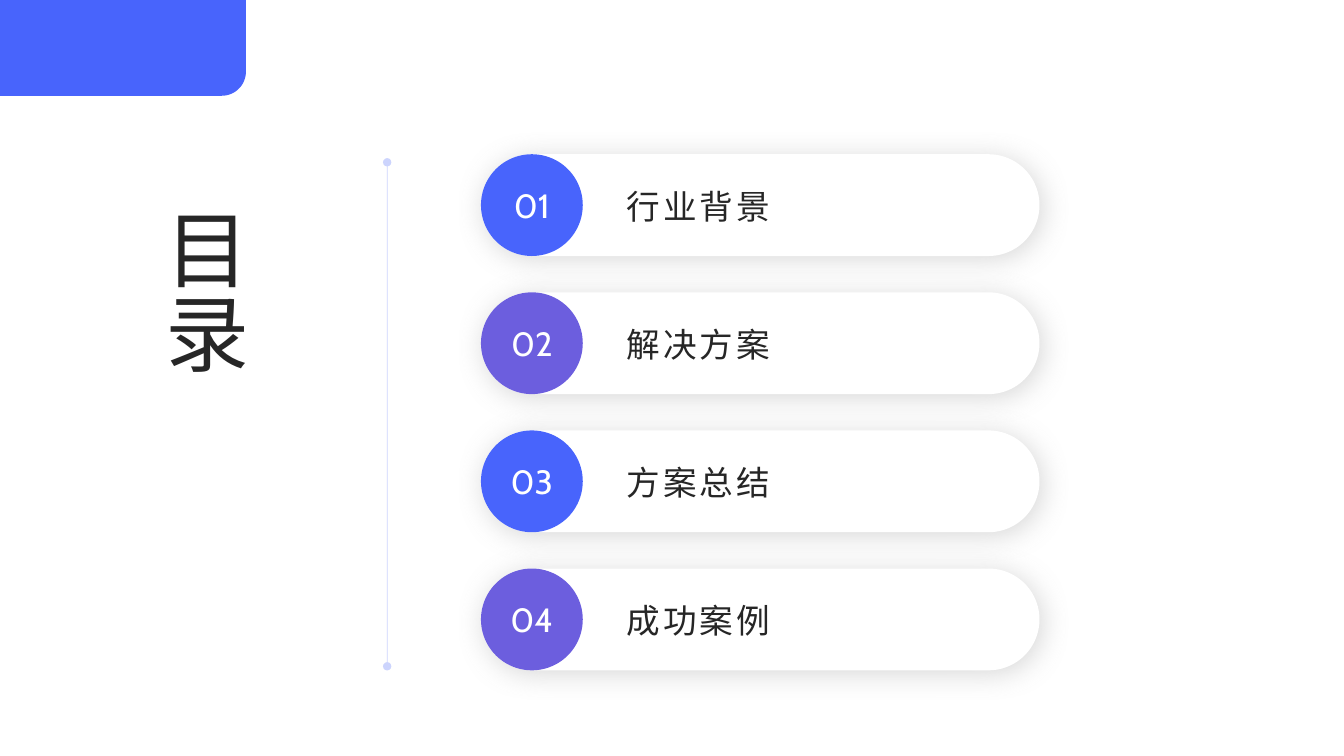
"""Build a contents slide with a vertical title and four numbered pills."""
from dataclasses import dataclass
from math import cos, pi, sin

from lxml.etree import SubElement
from pptx import Presentation
from pptx.dml.color import RGBColor
from pptx.enum.shapes import MSO_CONNECTOR as Connector, MSO_SHAPE as Preset
from pptx.enum.text import MSO_ANCHOR as Anchor, PP_ALIGN as Align
from pptx.oxml.ns import qn
from pptx.util import Pt

EMU_PER_PX = 9144


@dataclass(frozen=True)
class Theme:
    font: str = "Cabin"
    blue: str = "4864FC"
    purple: str = "6C5EDE"
    rule: str = "002AF9"
    ink: str = "262626"
    white: str = "FFFFFF"
    shadow: str = "808080"
    title_size: int = 60
    item_size: int = 24


def px(*lengths):
    return [round(length * EMU_PER_PX) for length in lengths]


class SlideBuilder:
    def __init__(self, presentation, theme):
        self.theme = theme
        self.slide = presentation.slides.add_slide(presentation.slide_layouts[6])
        self.shapes = self.slide.shapes

    def paint(self, shape, color):
        shape.shadow.inherit = False
        shape.fill.solid()
        shape.fill.fore_color.rgb = RGBColor.from_string(color)
        shape.line.fill.background()

    def preset(self, kind, box, color):
        shape = self.shapes.add_shape(kind, *px(*box))
        self.paint(shape, color)
        return shape

    def set_text(self, shape, text, size, color, align, inset=(0, 0), spacing=0):
        frame = shape.text_frame
        across, down = px(*inset)
        frame_format = {
            "word_wrap": True, "vertical_anchor": Anchor.MIDDLE,
            "margin_left": across, "margin_right": across,
            "margin_top": down, "margin_bottom": down,
        }
        for name, value in frame_format.items():
            setattr(frame, name, value)
        paragraph = frame.paragraphs[0]
        paragraph.alignment = align
        run = paragraph.add_run()
        run.text = text
        for name, value in {"name": self.theme.font, "size": Pt(size)}.items():
            setattr(run.font, name, value)
        run.font.color.rgb = RGBColor.from_string(color)
        if spacing:
            shape.element.find(".//" + qn("a:rPr")).set("spc", str(spacing * 100))

    def label(self, box, text, size, align=Align.LEFT, inset=(10, 0), spacing=0,
              vertical=False):
        shape = self.shapes.add_textbox(*px(*box))
        self.set_text(shape, text, size, self.theme.ink, align, inset, spacing)
        if vertical:
            shape.element.find(".//" + qn("a:bodyPr")).set("vert", "eaVert")

    def badge(self, box, text, color):
        shape = self.preset(Preset.OVAL, box, color)
        self.set_text(shape, text, self.theme.item_size, self.theme.white, Align.CENTER)

    def pill(self, box):
        shape = self.preset(Preset.ROUNDED_RECTANGLE, box, self.theme.white)
        shape.adjustments[0] = 0.5
        effects = shape.element.spPr.find(qn("a:effectLst"))
        shadow = SubElement(effects, qn("a:outerShdw"), blurRad=str(int(Pt(20))),
                            dist=str(int(Pt(3))), dir="2700000", algn="tl",
                            rotWithShape="0")
        color = SubElement(shadow, qn("a:srgbClr"), val=self.theme.shadow)
        SubElement(color, qn("a:alpha"), val="30000")

    def corner_tab(self, left, top, right, bottom, radius, steps=24):
        angles = [pi / 2 * step / steps for step in range(steps + 1)]
        arc = [(right - radius + radius * cos(angle),
                bottom - radius + radius * sin(angle)) for angle in angles]
        outline = [(right, top), *arc, (left, bottom)]
        freeform = self.shapes.build_freeform(*px(left, top))
        freeform.add_line_segments([px(*point) for point in outline], close=True)
        self.paint(freeform.convert_to_shape(), self.theme.blue)

    def dotted_end_rule(self, x, top, bottom):
        connector = self.shapes.add_connector(Connector.STRAIGHT, *px(x, top, x, bottom))
        connector.line.width = Pt(0.5)
        connector.line.color.rgb = RGBColor.from_string(self.theme.rule)
        properties = connector.element.spPr
        SubElement(properties.find(".//" + qn("a:srgbClr")), qn("a:alpha"), val="20000")
        for end in ("a:headEnd", "a:tailEnd"):
            SubElement(properties.find(qn("a:ln")), qn(end), type="oval")
        SubElement(properties, qn("a:effectLst"))


def main():
    theme = Theme()
    presentation = Presentation()
    slide_size = zip(("slide_width", "slide_height"), px(1333, 750))
    for name, value in slide_size:
        setattr(presentation, name, value)

    builder = SlideBuilder(presentation, theme)
    builder.dotted_end_rule(384, 161, 661)
    builder.corner_tab(-2, 0, 244, 95, 24)
    builder.label((128, 196, 150, 232), "目录", theme.title_size,
                  inset=(10, 5), vertical=True)

    left, first_top, pitch, height = 477, 153, 137, 101
    topics = ("行业背景", "解决方案", "方案总结", "成功案例")
    for index, topic in enumerate(topics):
        top = first_top + index * pitch
        color = (theme.blue, theme.purple)[index % 2]
        builder.pill((left, top, 554, height))
        builder.badge((left, top, height, height), f"{index + 1:02}", color)
        builder.label((612, top + 1, 419, height), topic, theme.item_size, spacing=2)

    presentation.save("out.pptx")


if __name__ == "__main__":
    main()
